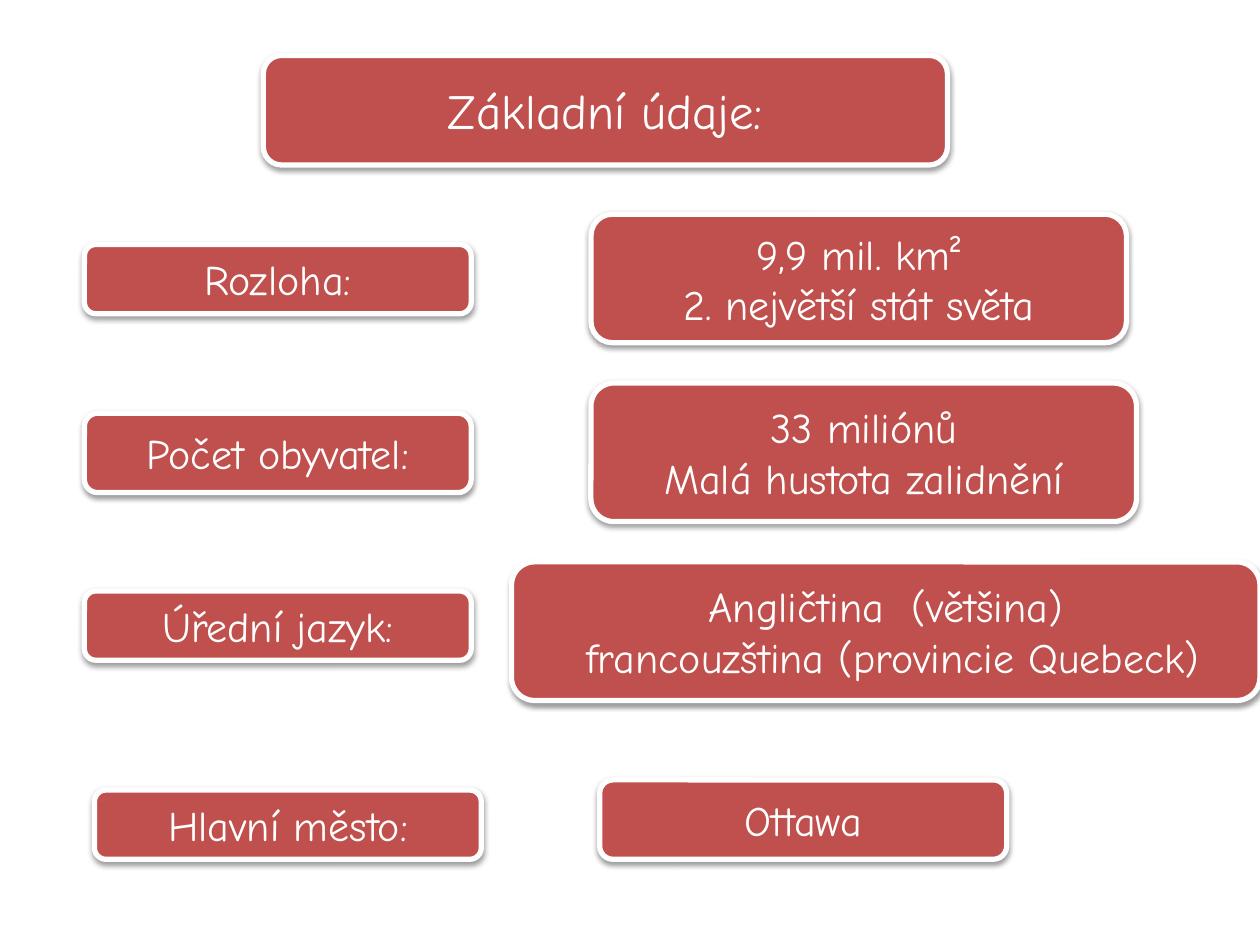
from dataclasses import dataclass

from lxml import etree
from pptx import Presentation
from pptx.dml.color import RGBColor
from pptx.enum.shapes import MSO_SHAPE
from pptx.enum.text import MSO_ANCHOR, PP_ALIGN
from pptx.oxml import parse_xml
from pptx.oxml.ns import nsdecls, qn
from pptx.shapes.autoshape import Shape
from pptx.slide import Slide
from pptx.util import Inches, Pt

ROUNDED = MSO_SHAPE.ROUNDED_RECTANGLE
MIDDLE = MSO_ANCHOR.MIDDLE
CENTER = PP_ALIGN.CENTER
RED = RGBColor(0xC0, 0x50, 0x4D)
WHITE = RGBColor(0xFF, 0xFF, 0xFF)
FONT = "Comic Neue"
LABEL_WIDTH = 3.07


@dataclass(frozen=True)
class Card:
    text: str
    left: float
    top: float
    width: float
    height: float
    size: int = 24


HEADING = Card("Základní údaje:", 2.09, 0.44, 5.43, 0.87, size=28)

# Each fact is a label and its value
FACTS = [
    (Card("Rozloha:", 0.67, 1.94, LABEL_WIDTH, 0.55),
     Card("9,9 mil. km²\n2. největší stát světa", 4.69, 1.7, 4.25, 1.02)),
    (Card("Počet obyvatel:", 0.67, 3.28, LABEL_WIDTH, 0.63),
     Card("33 miliónů\nMalá hustota zalidnění", 4.69, 3.04, 4.33, 1.1)),
    (Card("Úřední jazyk:", 0.67, 4.69, LABEL_WIDTH, 0.55),
     Card("Angličtina  (většina)\n francouzština (provincie Quebeck)",
          4.06, 4.46, 5.94, 1.1)),
    (Card("Hlavní město:", 0.75, 6.27, LABEL_WIDTH, 0.55),
     Card("Ottawa", 4.76, 6.19, 3.23, 0.63)),
]


def add_soft_shadow(shape: Shape) -> None:
    """Give the shape a soft shadow falling straight down."""
    shape.shadow.inherit = False
    effects: etree._Element = shape._element.spPr.find(qn("a:effectLst"))
    effects.append(parse_xml(
        f'<a:outerShdw {nsdecls("a")} blurRad="{Pt(3.1)}" dist="{Pt(1.6)}" '
        'dir="5400000" rotWithShape="0">'
        '<a:srgbClr val="000000"><a:alpha val="38000"/></a:srgbClr>'
        '</a:outerShdw>'))


def add_card(slide: Slide, card: Card) -> None:
    shape = slide.shapes.add_shape(
        ROUNDED, Inches(card.left), Inches(card.top),
        Inches(card.width), Inches(card.height))
    shape.fill.solid()
    shape.fill.fore_color.rgb = RED
    shape.line.color.rgb = WHITE
    shape.line.width = Pt(3)
    add_soft_shadow(shape)

    frame = shape.text_frame
    frame.word_wrap = True
    frame.vertical_anchor = MIDDLE
    frame.text = card.text
    for paragraph in frame.paragraphs:
        paragraph.alignment = CENTER
        for run in paragraph.runs:
            run.font.name = FONT
            run.font.size = Pt(card.size)
            run.font.color.rgb = WHITE


def main() -> None:
    presentation = Presentation()
    presentation.slide_width = Inches(10)
    presentation.slide_height = Inches(7.5)
    slide = presentation.slides.add_slide(presentation.slide_layouts[6])

    # Heading
    add_card(slide, HEADING)

    # Facts about the country
    for label, value in FACTS:
        add_card(slide, label)
        add_card(slide, value)

    presentation.save("out.pptx")


if __name__ == "__main__":
    main()
